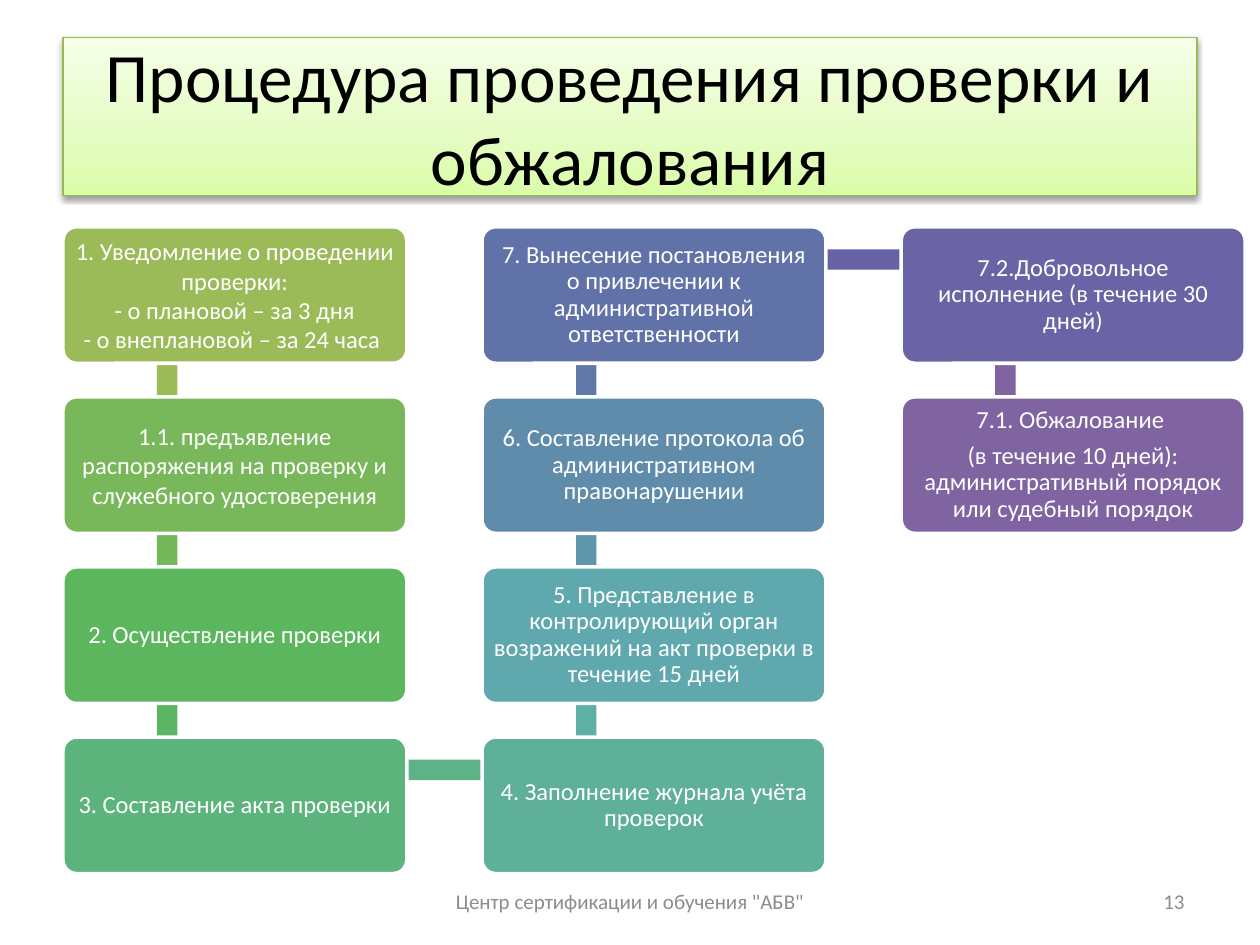
from itertools import pairwise

from lxml.etree import SubElement
from pptx import Presentation
from pptx.dml.color import RGBColor
from pptx.enum.shapes import MSO_SHAPE
from pptx.enum.text import MSO_ANCHOR, PP_ALIGN
from pptx.oxml.ns import qn
from pptx.util import Pt

BOX_W, BOX_H = 196.5, 78
PITCH_X, PITCH_Y = 239.5, 97.2
BAR = 11.7

# column, row, box colour, colour of the bar to the next step, line spacing, paragraphs
STEPS = [
    (0, 0, "9BBB59", "9BBB59", 1, ["1. Уведомление о проведении проверки:",
                                   "- о плановой – за 3 дня",
                                   "- о внеплановой – за 24 часа "]),
    (0, 1, "79B85A", "75B85A", 1,
     ["1.1. предъявление распоряжения на проверку и служебного удостоверения"]),
    (0, 2, "5BB65D", "5CB565", 0.9, ["2. Осуществление проверки"]),
    (0, 3, "5CB37C", "5DB287", 0.9, ["3. Составление акта проверки"]),
    (1, 3, "5EB099", "5EAFA6", 0.9, ["4. Заполнение журнала учёта проверок"]),
    (1, 2, "5FA8AD", "6096AC", 0.9,
     ["5. Представление в контролирующий орган возражений на акт проверки в течение 15 дней"]),
    (1, 1, "608CAB", "6179A8", 0.9,
     ["6. Составление протокола об административном правонарушении"]),
    (1, 0, "6172A8", "6762A5", 0.9,
     ["7. Вынесение постановления о привлечении к административной ответственности"]),
    (2, 0, "6A63A5", "8064A2", 0.9, ["7.2.Добровольное исполнение (в течение 30 дней)"]),
    (2, 1, "8064A2", None, 0.9,
     ["7.1. Обжалование ",
      "(в течение 10 дней): административный порядок или судебный порядок"]),
]


def rgb(color):
    """Turn a hex string into a colour."""
    return RGBColor.from_string(color)


def add_text(tf, paragraphs, size=14, color="FFFFFF", align=PP_ALIGN.CENTER,
             spacing=1, after=0, inset=None):
    """Fill a text frame with uniformly formatted paragraphs."""
    tf.word_wrap = True
    tf.vertical_anchor = MSO_ANCHOR.MIDDLE
    if inset is not None:
        tf.margin_left = tf.margin_right = tf.margin_top = tf.margin_bottom = Pt(inset)
    for i, text in enumerate(paragraphs):
        p = tf.add_paragraph() if i else tf.paragraphs[0]
        p.alignment, p.line_spacing, p.space_after = align, spacing, Pt(after)
        r = p.add_run()
        r.text = text
        r.font.name, r.font.size, r.font.color.rgb = "Calibri", Pt(size), rgb(color)


def add_box(s, kind, x, y, w, h, fill=None, line=None, width=0):
    """Add a preset shape without shadow."""
    sp = s.shapes.add_shape(kind, Pt(x), Pt(y), Pt(w), Pt(h))
    sp.shadow.inherit = False
    if fill:
        sp.fill.solid()
        sp.fill.fore_color.rgb = rgb(fill)
    if line:
        sp.line.color.rgb = rgb(line)
        sp.line.width = Pt(width)
    else:
        sp.line.fill.background()
    return sp


def add_title(s, x, y, w, h):
    """Add the title banner with its gradient and soft shadow."""
    sp = add_box(s, MSO_SHAPE.RECTANGLE, x, y, w, h, line="98B955", width=0.75)
    sp.fill.gradient()
    sp.fill.gradient_angle = 90
    stops = sp._element.spPr.find(".//" + qn("a:gsLst"))
    for stop in list(stops):
        stops.remove(stop)
    for pos, color in ((0, "DAFDA7"), (35, "E4FCC2"), (100, "F5FFE7")):
        stop = SubElement(stops, qn("a:gs"), pos=str(pos * 1000))
        SubElement(stop, qn("a:srgbClr"), val=color)
    effects = sp._element.spPr.find(qn("a:effectLst"))
    shadow = SubElement(effects, qn("a:outerShdw"), blurRad=str(Pt(3.1)),
                        dist=str(Pt(1.6)), dir="5400000", rotWithShape="0")
    black = SubElement(shadow, qn("a:srgbClr"), val="000000")
    SubElement(black, qn("a:alpha"), val="38000")
    add_text(sp.text_frame, ["Процедура проведения проверки и обжалования"],
             size=39.6, color="000000")


def add_bar(s, x, y, start, end, color):
    """Add the bar that links two neighbouring grid cells."""
    (c1, r1), (c2, r2) = start, end
    across = c1 != c2
    length = 238.5 if across else 96.5
    cx = x + c1 * PITCH_X + (179.5 if across else 59.5)
    cy = y + min(r1, r2) * PITCH_Y + (18.7 if across else 67.8)
    sp = add_box(s, MSO_SHAPE.RECTANGLE, cx - length / 2, cy - BAR / 2, length, BAR, color)
    sp.rotation = 0 if across else 90 if r2 > r1 else 270


def add_flow(s, x, y):
    """Add the snaking chain of steps, bars behind boxes."""
    for a, b in pairwise(STEPS):
        add_bar(s, x, y, a[:2], b[:2], a[3])
    for col, row, color, _, spacing, paragraphs in STEPS:
        sp = add_box(s, MSO_SHAPE.ROUNDED_RECTANGLE, x + col * PITCH_X, y + row * PITCH_Y,
                     BOX_W, BOX_H, color, "FFFFFF", 2)
        sp.adjustments[0] = 0.1
        add_text(sp.text_frame, paragraphs, spacing=spacing,
                 after=5 if spacing < 1 else 0, inset=4.2)


def add_footer(s, x, y, w, h, text, align):
    """Add one grey footer text."""
    tb = s.shapes.add_textbox(Pt(x), Pt(y), Pt(w), Pt(h))
    add_text(tb.text_frame, [text], size=12, color="8C8C8C", align=align)


def main():
    """Build and save the slide."""
    prs = Presentation()
    prs.slide_width, prs.slide_height = Pt(720), Pt(540)
    s = prs.slides.add_slide(prs.slide_layouts[6])
    add_title(s, 36, 21.6, 648, 90)
    add_flow(s, 36, 129.6)
    add_footer(s, 246, 500.5, 228, 28.75, 'Центр сертификации и обучения "АБВ"', PP_ALIGN.CENTER)
    add_footer(s, 516, 500.5, 168, 28.75, "13", PP_ALIGN.RIGHT)
    prs.save("out.pptx")


if __name__ == "__main__":
    main()
